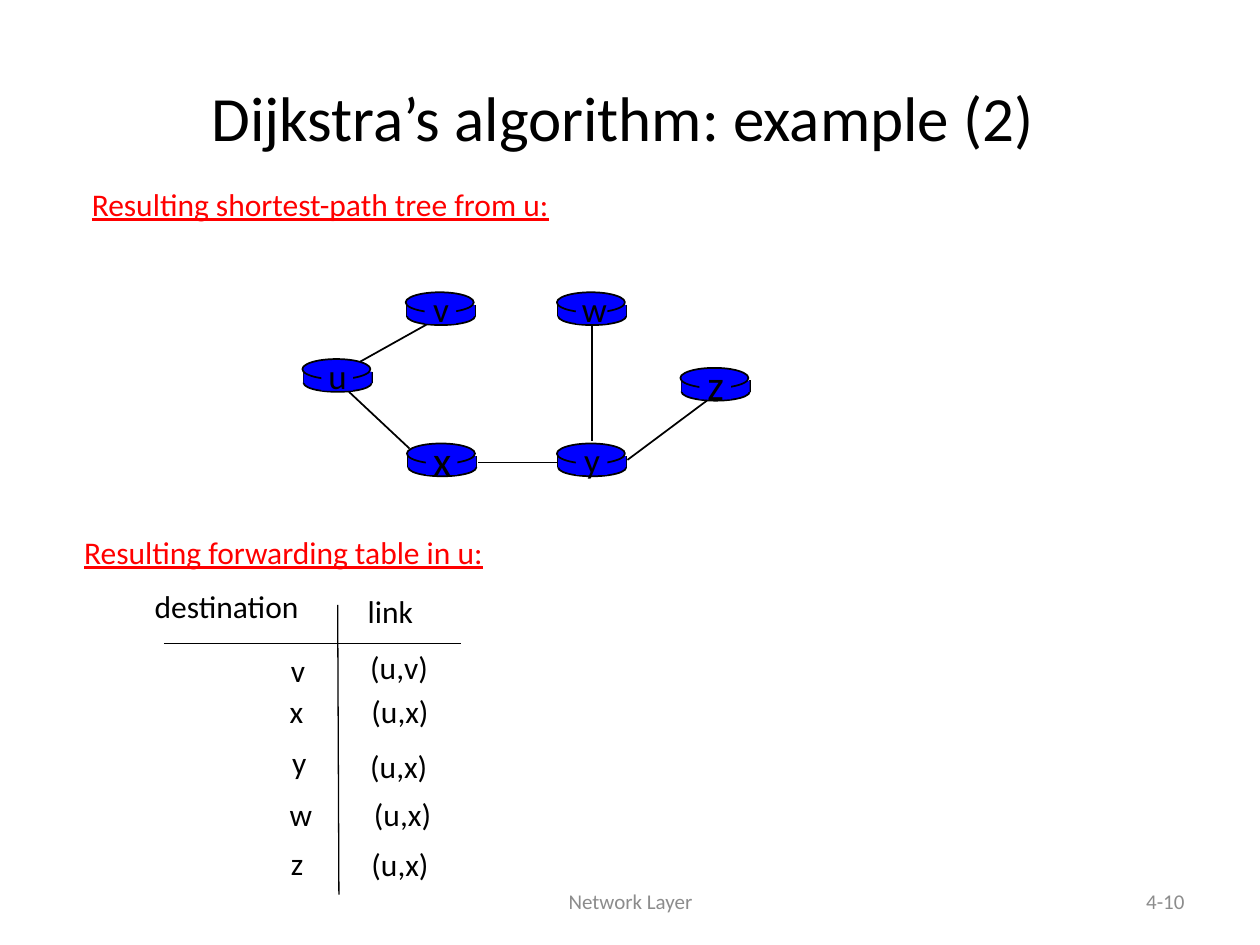
from pptx import Presentation
from pptx.dml.color import RGBColor
from pptx.enum.shapes import MSO_CONNECTOR, MSO_SHAPE
from pptx.enum.text import MSO_ANCHOR, MSO_AUTO_SIZE, PP_ALIGN
from pptx.oxml.ns import qn
from pptx.util import Inches, Pt
from lxml.etree import SubElement

BLACK = RGBColor(0, 0, 0)
BLUE = RGBColor(0, 0, 255)
RED = RGBColor(255, 0, 0)
GRAY = RGBColor(0x8C, 0x8C, 0x8C)
FONT = "Calibri"

# Content
TITLE = "Dijkstra’s algorithm: example (2) "
HEADINGS = [
    ("Resulting shortest-path tree from u:", 0.63, 1.42, 4.49),
    ("Resulting forwarding table in u:", 0.57, 4.18, 3.84),
]
FOOTERS = [
    ("Network Layer", 3.42, 3.17, PP_ALIGN.CENTER),
    ("4-10", 7.17, 2.33, PP_ALIGN.RIGHT),
]
# name, left, top, label size
ROUTERS = [
    ("u", 2.40, 2.85, 20),
    ("y", 4.42, 3.52, 20),
    ("x", 3.23, 3.52, 24),
    ("w", 4.42, 2.32, 20),
    ("v", 3.22, 2.32, 20),
    ("z", 5.40, 2.92, 24),
]
EDGE_UV = (2.86, 2.87, 3.45, 2.54)
FRONT_EDGES = [
    (4.70, 2.59, 4.70, 3.50),  # w-y
    (4.98, 3.65, 5.61, 3.18),  # y-z
    (4.43, 3.67, 3.79, 3.67),  # y-x
    (3.25, 3.56, 2.77, 3.11),  # x-u
]
TABLE_RULES = [(2.68, 4.80, 2.69, 7.10), (1.30, 5.11, 3.66, 5.11)]
# text, left, top, width
HEADER = [("destination", 1.13, 4.61, 1.5), ("link", 2.82, 4.65, 0.6)]
# destination, left, top; link, left, top
ROWS = [
    ("v", 2.21, 5.12, "(u,v)", 2.84, 5.09),
    ("x", 2.20, 5.44, "(u,x)", 2.85, 5.44),
    ("y", 2.22, 5.85, "(u,x)", 2.84, 5.88),
    ("w", 2.20, 6.26, "(u,x)", 2.87, 6.26),
    ("z", 2.21, 6.65, "(u,x)", 2.85, 6.66),
]
ROUTER_W = 0.54


def style(p, size, color, align=None):
    p.alignment = align
    p.font.name = FONT
    p.font.size = Pt(size)
    p.font.color.rgb = color


def add_text(shapes, text, x, y, w, h=0.4, size=18, color=BLACK, align=None):
    tf = shapes.add_textbox(Inches(x), Inches(y), Inches(w), Inches(h)).text_frame
    tf.word_wrap = False
    tf.auto_size = MSO_AUTO_SIZE.SHAPE_TO_FIT_TEXT
    p = tf.paragraphs[0]
    p.text = text
    style(p, size, color, align)
    return tf


def add_line(shapes, ends, width=1):
    line = shapes.add_connector(MSO_CONNECTOR.STRAIGHT, *map(Inches, ends))
    line.line.color.rgb = BLACK
    line.line.width = Pt(width)
    SubElement(line._element.spPr, qn("a:effectLst"))


def add_blue(shapes, kind, x, y, w, h, outlined=False):
    sp = shapes.add_shape(kind, Inches(x), Inches(y), Inches(w), Inches(h))
    sp.shadow.inherit = False
    sp.fill.solid()
    sp.fill.fore_color.rgb = BLUE
    if outlined:
        sp.line.color.rgb = BLACK
        sp.line.width = Pt(1)
    else:
        sp.line.fill.background()


def add_router(shapes, x, y):
    left, right = x + 0.01, x + 0.01 + ROUTER_W
    add_blue(shapes, MSO_SHAPE.OVAL, left, y + 0.12, ROUTER_W, 0.14, True)
    for side in (left, right):
        add_line(shapes, (side, y + 0.1, side, y + 0.19))
    add_blue(shapes, MSO_SHAPE.RECTANGLE, left, y + 0.1, ROUTER_W, 0.09)
    add_blue(shapes, MSO_SHAPE.OVAL, x, y, ROUTER_W, 0.16, True)


def add_label(shapes, name, x, y, size):
    add_blue(shapes, MSO_SHAPE.RECTANGLE, x + 0.15, y + 0.02, 0.25, 0.23)
    w, h = (0.36, 0.43) if size == 20 else (0.4, 0.5)
    add_text(shapes, name, x + 0.28 - w / 2, y + 0.13 - h / 2, w, h, size,
             align=PP_ALIGN.CENTER)


prs = Presentation()
prs.slide_width, prs.slide_height = Inches(10), Inches(7.5)
s = prs.slides.add_slide(prs.slide_layouts[5])

# Footer and slide number
for text, x, w, align in FOOTERS:
    tf = add_text(s.shapes, text, x, 6.95, w, 0.4, 12, GRAY, align)
    tf.word_wrap = True
    tf.auto_size = MSO_AUTO_SIZE.NONE
    tf.vertical_anchor = MSO_ANCHOR.MIDDLE

# Title
title = s.shapes.title
title.left, title.top = Inches(0.5), Inches(0.3)
title.width, title.height = Inches(9), Inches(1.25)
title.text_frame.text = TITLE
title.text_frame.vertical_anchor = MSO_ANCHOR.MIDDLE
style(title.text_frame.paragraphs[0], 36, BLACK, PP_ALIGN.CENTER)

# Shortest-path tree
tree = s.shapes.add_group_shape().shapes
add_line(tree, EDGE_UV)
for name, x, y, size in ROUTERS:
    add_router(tree, x, y)
for edge in FRONT_EDGES:
    add_line(tree, edge)
for router in ROUTERS:
    add_label(tree, *router)

# Forwarding table
table = s.shapes.add_group_shape().shapes
for rule in TABLE_RULES:
    add_line(table, rule, 0.75)
for dest, dest_x, dest_y, link, link_x, link_y in ROWS:
    add_text(table, dest, dest_x, dest_y, 0.34)
    add_text(table, link, link_x, link_y, 0.73)
for cell in HEADER:
    add_text(table, *cell)

# Section headings
for heading in HEADINGS:
    tf = add_text(s.shapes, *heading, color=RED)
    tf.paragraphs[0].font.underline = True

prs.save("out.pptx")
